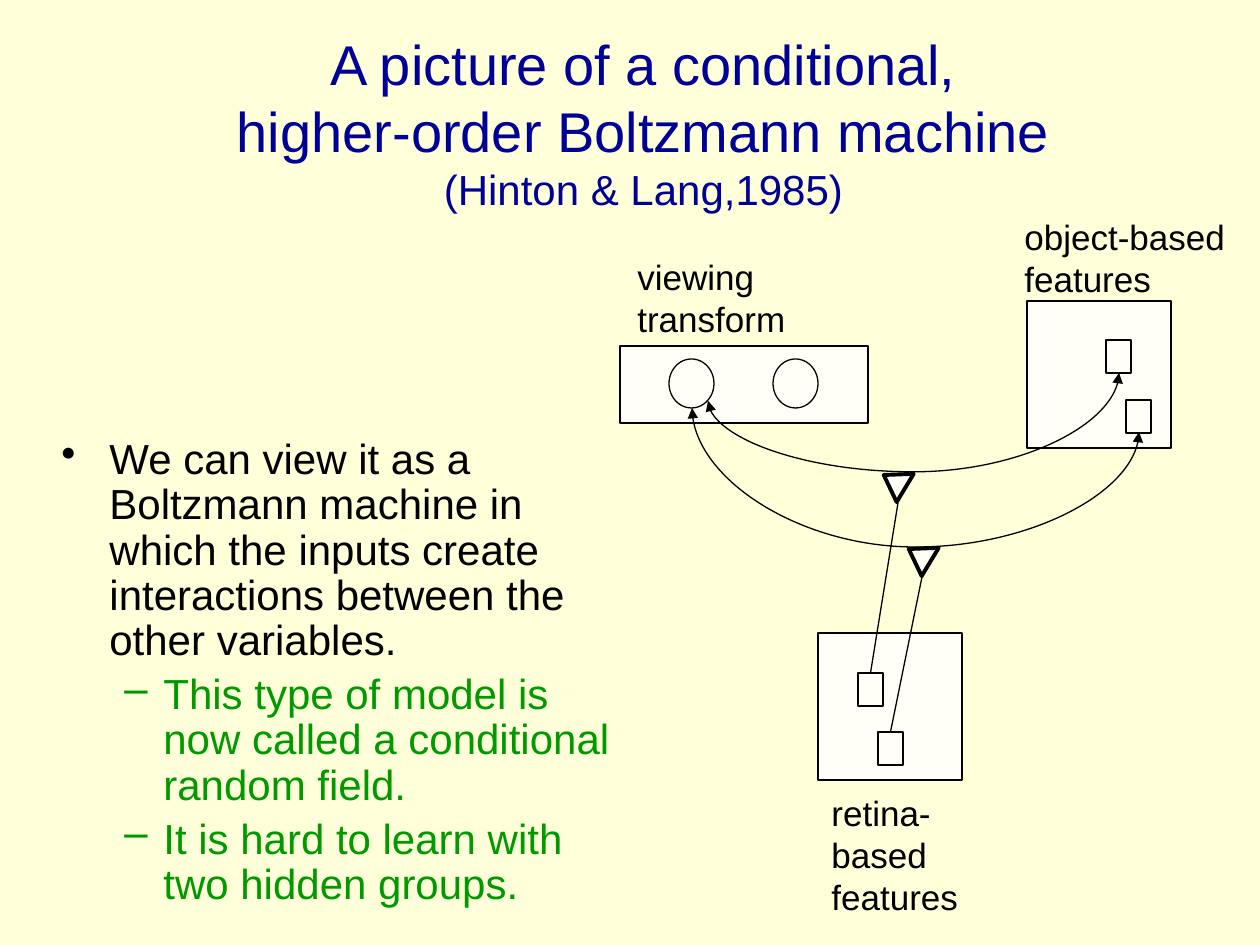
import lxml.etree
import pptx
import pptx.dml.color
import pptx.enum.shapes
import pptx.enum.text
import pptx.oxml.ns
import pptx.util

PX = 914400 / 126
CREAM = pptx.dml.color.RGBColor(0xFF, 0xFF, 0xD9)
IVORY = pptx.dml.color.RGBColor(0xFF, 0xFF, 0xF7)
BLACK = pptx.dml.color.RGBColor(0, 0, 0)
NAVY = pptx.dml.color.RGBColor(0, 0, 0x99)
GREEN = pptx.dml.color.RGBColor(0, 0x99, 0)
SHAPES = pptx.enum.shapes.MSO_SHAPE
CONNECTORS = pptx.enum.shapes.MSO_CONNECTOR
ANCHOR = pptx.enum.text.MSO_ANCHOR
ALIGN = pptx.enum.text.PP_ALIGN
qn = pptx.oxml.ns.qn


def px(length):
    return pptx.util.Emu(round(length * PX))


def add_child(parent, tag, **attributes):
    return lxml.etree.SubElement(parent, qn(tag), attributes)


def add_box(slide, left, top, width, height, anchor=ANCHOR.TOP):
    box = slide.shapes.add_textbox(px(left), px(top), px(width), px(height))
    box.text_frame.word_wrap = True
    box.text_frame.vertical_anchor = anchor
    return box.text_frame


def write(paragraph, text, size=20, color=BLACK, align=ALIGN.LEFT,
          bullet=None, level=0, margin=0, hanging=0):
    """Append text to a paragraph; a newline becomes a line break."""
    paragraph.alignment = align
    paragraph.level = level
    for index, line in enumerate(text.split("\n")):
        if index:
            paragraph.add_line_break()
        if line:
            run = paragraph.add_run()
            run.text = line
            run.font.name = "Arial"
            run.font.size = pptx.util.Pt(size)
            run.font.color.rgb = color
    if bullet:
        paragraph.line_spacing = 0.9
        paragraph.space_before = pptx.util.Pt(size * 0.2)
        properties = paragraph._p.get_or_add_pPr()
        properties.set("marL", str(px(margin)))
        properties.set("indent", str(-px(hanging)))
        add_child(properties, "a:buChar", char=bullet)


def add_shape(slide, kind, left, top, width, height, line_width=0.75, rotation=0):
    shape = slide.shapes.add_shape(kind, px(left), px(top), px(width), px(height))
    shape.shadow.inherit = False
    shape.rotation = rotation
    shape.fill.solid()
    shape.fill.fore_color.rgb = IVORY
    shape.line.color.rgb = BLACK
    shape.line.width = pptx.util.Pt(line_width)
    return shape


def add_feature_panel(slide, left, top, offsets):
    """Draw a panel and return the small units inside it."""
    add_shape(slide, SHAPES.RECTANGLE, left, top, 144, 147)
    return [add_shape(slide, SHAPES.RECTANGLE, left + x, top + y, 25, 33)
            for x, y in offsets]


def add_line(slide, x1, y1, x2, y2, kind=CONNECTORS.STRAIGHT):
    line = slide.shapes.add_connector(kind, px(x1), px(y1), px(x2), px(y2))
    line.line.color.rgb = BLACK
    line.line.width = pptx.util.Pt(0.75)
    add_child(line._element.spPr, "a:effectLst")
    return line


def add_hanging_curve(slide, x1, y1, x2, y2, bottom):
    """Double-headed curve that leaves both ends downwards and dips to bottom."""
    width, height = abs(y2 - y1), x2 - x1
    left = (x1 + x2 - width) / 2
    top = (y1 + y2 - height) / 2
    curve = add_line(slide, left, top, left + width, top + height, CONNECTORS.CURVE)
    properties = curve._element.spPr

    # A quarter turn makes the ends vertical; the flips put the start at left
    transform = properties.find(qn("a:xfrm"))
    rising = y2 < y1
    transform.set("rot", str((90 if rising else 270) * 60000))
    transform.set("flipH", "1")
    if rising:
        transform.set("flipV", "1")
    adjustments = properties.find(qn("a:prstGeom")).get_or_add_avLst()
    depth = round((bottom - y1) / (y2 - y1) * 100000)
    add_child(adjustments, "a:gd", name="adj1", fmla=f"val {depth}")

    # Arrowheads
    outline = properties.find(qn("a:ln"))
    for end in ("a:headEnd", "a:tailEnd"):
        add_child(outline, end, type="triangle")


def add_texts(slide):
    # Title
    title = add_box(slide, 122, 43, 1043, 157, ANCHOR.MIDDLE).paragraphs[0]
    write(title, "A picture of a conditional,\nhigher-order Boltzmann machine\n",
          size=32, color=NAVY, align=ALIGN.CENTER)
    write(title, "(Hinton & Lang,1985)", size=24, color=NAVY, align=ALIGN.CENTER)

    # Bullets
    body = add_box(slide, 49, 432, 586, 333)
    write(body.paragraphs[0],
          "We can view it as a Boltzmann machine in which the inputs create "
          "interactions between the other variables.",
          size=24, bullet="•", margin=48, hanging=48)
    for text in ("This type of model is now called a conditional random field.",
                 "It is hard to learn with two hidden groups."):
        write(body.add_paragraph(), text, size=24, color=GREEN,
              bullet="–", level=1, margin=102, hanging=39)

    # Diagram labels
    for text, left, top, width, height in (
            ("retina-based features", 819, 785, 184, 139),
            ("object-based features", 1012, 209, 253, 97),
            ("viewing transform", 625, 249, 253, 97)):
        write(add_box(slide, left, top, width, height).paragraphs[0], text)


def add_diagram(slide):
    # Panels with their units
    retina_units = add_feature_panel(slide, 818, 633, [(40, 40), (60, 99)])
    add_feature_panel(slide, 1027, 301, [(79, 39), (99, 99)])
    add_shape(slide, SHAPES.RECTANGLE, 620, 346, 248, 77)
    for left in (669, 773):
        add_shape(slide, SHAPES.OVAL, left, 359, 45, 49)

    # Curves between the viewing transform and the object features
    add_hanging_curve(slide, 708, 401, 1119, 373, bottom=472)
    add_hanging_curve(slide, 692, 408, 1139, 432, bottom=547)

    # Gates, each driven by a retina unit
    for unit, (left, top), (tip_x, tip_y) in zip(
            retina_units, ((878, 469), (903, 543)), ((898, 503), (922, 577))):
        add_shape(slide, SHAPES.ISOSCELES_TRIANGLE, left, top, 33, 25,
                  line_width=2.25, rotation=301.2)
        link = add_line(slide, tip_x, tip_y + 100, tip_x, tip_y)
        link.begin_connect(unit, 0)


def main():
    presentation = pptx.Presentation()
    presentation.slide_width = px(1260)
    presentation.slide_height = px(945)
    slide = presentation.slides.add_slide(presentation.slide_layouts[6])
    slide.background.fill.solid()
    slide.background.fill.fore_color.rgb = CREAM
    add_texts(slide)
    add_diagram(slide)
    presentation.save("out.pptx")


if __name__ == "__main__":
    main()
